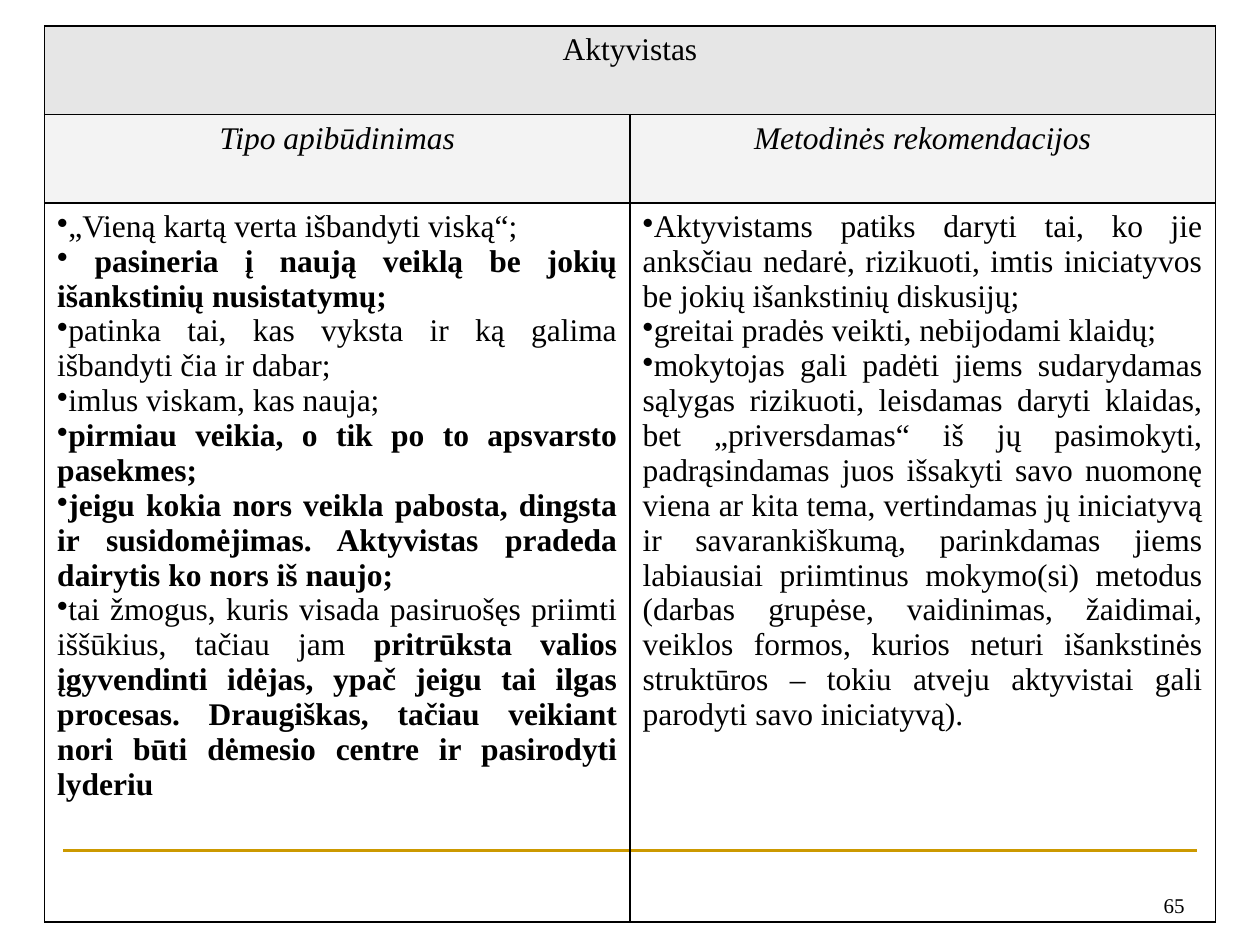
from lxml import etree
from pptx import Presentation
from pptx.dml.color import RGBColor
from pptx.enum.shapes import MSO_CONNECTOR
from pptx.enum.text import MSO_ANCHOR, PP_ALIGN
from pptx.oxml import parse_xml
from pptx.oxml.ns import nsdecls, qn
from pptx.util import Pt

STRAIGHT = MSO_CONNECTOR.STRAIGHT
BOTTOM = MSO_ANCHOR.BOTTOM
CENTER, RIGHT, JUSTIFY = PP_ALIGN.CENTER, PP_ALIGN.RIGHT, PP_ALIGN.JUSTIFY

TITLE = "Aktyvistas"
HEADINGS = ["Tipo apibūdinimas", "Metodinės rekomendacijos"]
DESCRIPTION = [
    [("„Vieną kartą verta išbandyti viską“;", False)],
    [(" ", False), ("pasineria į naują veiklą be jokių išankstinių nusistatymų;", True)],
    [("patinka tai, kas vyksta ir ką galima išbandyti čia ir dabar;", False)],
    [("imlus viskam, kas nauja;", False)],
    [("pirmiau veikia, o tik po to apsvarsto pasekmes;", True)],
    [("jeigu kokia nors veikla pabosta, dingsta ir susidomėjimas. "
      "Aktyvistas pradeda dairytis ko nors iš naujo;", True)],
    [("tai žmogus, kuris visada pasiruošęs priimti iššūkius, tačiau jam ", False),
     ("pritrūksta valios įgyvendinti idėjas, ypač jeigu tai ilgas procesas. "
      "Draugiškas, tačiau veikiant nori būti dėmesio centre ir pasirodyti lyderiu", True)],
]
RECOMMENDATIONS = [
    [("Aktyvistams patiks daryti tai, ko jie anksčiau nedarė, rizikuoti, "
      "imtis iniciatyvos be jokių išankstinių diskusijų;", False)],
    [("greitai pradės veikti, nebijodami klaidų;", False)],
    [("mokytojas gali padėti jiems sudarydamas sąlygas rizikuoti, leisdamas daryti "
      "klaidas, bet „priversdamas“ iš jų pasimokyti, padrąsindamas juos išsakyti savo "
      "nuomonę viena ar kita tema, vertindamas jų iniciatyvą ir savarankiškumą, "
      "parinkdamas jiems labiausiai priimtinus mokymo(si) metodus (darbas grupėse, "
      "vaidinimas, žaidimai, veiklos formos, kurios neturi išankstinės struktūros – "
      "tokiu atveju aktyvistai gali parodyti savo iniciatyvą).", False)],
]


def color(code):
    """Return the colour for a hex string."""
    return RGBColor.from_string(code)


def write(frame, paragraphs, size=18, align=CENTER, italic=False, bullet=None):
    """Fill a text frame with paragraphs of (text, bold) runs."""
    for index, runs in enumerate(paragraphs):
        paragraph = frame.add_paragraph() if index else frame.paragraphs[0]
        paragraph.alignment = align
        if bullet:
            properties = paragraph._p.get_or_add_pPr()
            properties.set("marL", "0")
            properties.set("indent", "0")
            etree.SubElement(properties, qn("a:buChar")).set("char", bullet)
        for text, bold in runs:
            run = paragraph.add_run()
            run.text = text
            run.font.name = "Times New Roman"
            run.font.size = Pt(size)
            run.font.bold = bold
            run.font.italic = italic
            run.font.color.rgb = color("000000")


def style_cell(cell, fill=None):
    """Give a cell thin black borders and an optional fill."""
    if fill:
        cell.fill.solid()
        cell.fill.fore_color.rgb = color(fill)
    else:
        cell.fill.background()
    properties = cell._tc.get_or_add_tcPr()
    for position, side in enumerate(("lnL", "lnR", "lnT", "lnB")):
        properties.insert(position, parse_xml(
            f'<a:{side} {nsdecls("a")} w="{Pt(1)}"><a:solidFill>'
            f'<a:srgbClr val="000000"/></a:solidFill></a:{side}>'))


def add_footer(slide, left, top, width):
    """Draw the gold rule with the slide number below its right end."""
    rule = slide.shapes.add_connector(
        STRAIGHT, Pt(left), Pt(top), Pt(left + width), Pt(top))
    rule.line.color.rgb = color("CC9900")
    rule.line.width = Pt(1.5)
    etree.SubElement(rule._element.spPr, qn("a:effectLst"))
    number_width = 168
    number = slide.shapes.add_textbox(
        Pt(left + width - number_width), Pt(top + 6), Pt(number_width), Pt(36))
    number.text_frame.word_wrap = True
    number.text_frame.vertical_anchor = BOTTOM
    write(number.text_frame, [[("65", False)]], size=12, align=RIGHT)


def add_type_table(slide, left, top, width, height):
    """Place the table with a title, two headings and two bulleted lists."""
    header_height = 50.5
    table = slide.shapes.add_table(
        3, 2, Pt(left), Pt(top), Pt(width), Pt(height)).table
    for column in table.columns:
        column.width = Pt(width / 2)
    heights = (header_height, header_height, height - 2 * header_height)
    for row, row_height in zip(table.rows, heights):
        row.height = Pt(row_height)
    for row, fill in zip(table.rows, ("E6E6E6", "F3F3F3", None)):
        for cell in row.cells:
            style_cell(cell, fill)
    table.cell(0, 0).merge(table.cell(0, 1))
    write(table.cell(0, 0).text_frame, [[(TITLE, False)]])
    for column, (heading, items) in enumerate(
            zip(HEADINGS, (DESCRIPTION, RECOMMENDATIONS))):
        write(table.cell(1, column).text_frame, [[(heading, False)]], italic=True)
        write(table.cell(2, column).text_frame, items, align=JUSTIFY, bullet="•")


def main():
    """Build and save the slide."""
    presentation = Presentation()
    presentation.slide_width = Pt(720)
    presentation.slide_height = Pt(540)
    slide = presentation.slides.add_slide(presentation.slide_layouts[6])
    add_footer(slide, 36, 486, 648)
    add_type_table(slide, 25.5, 15, 669, 512)
    presentation.save("out.pptx")


if __name__ == "__main__":
    main()
